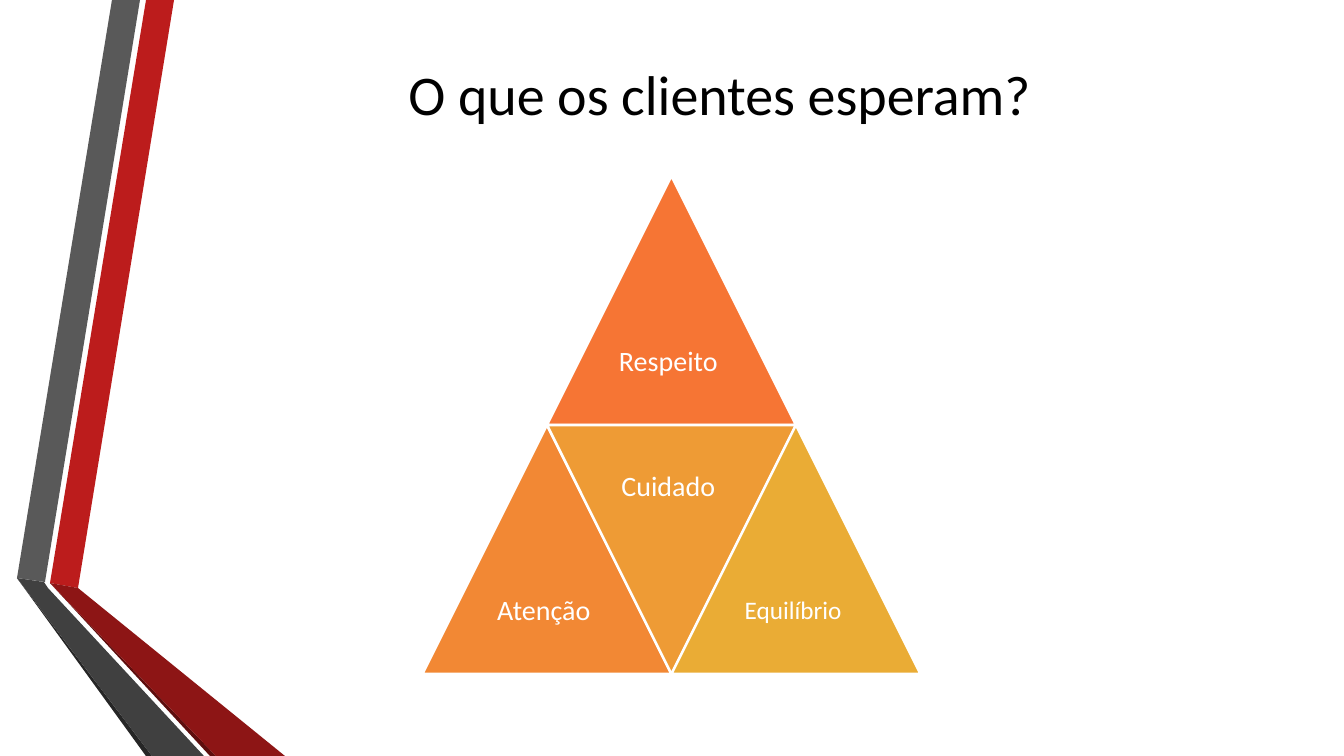
from pptx import Presentation
from pptx.dml.color import RGBColor
from pptx.enum.shapes import MSO_SHAPE as Shape
from pptx.enum.text import MSO_ANCHOR as Anchor, PP_ALIGN as Align
from pptx.util import Pt

PX = 914400 / 100.8  # EMU in one px
WIDTH, HEIGHT = 1344, 756

# Content
TITLE = "O que os clientes esperam?"
TITLE_BOX = (167, 0, 1105, 194)
FONT = "Calibri"

RIBBONS = [  # colour, outline in px
    ("BC1C1C", [(50, 583), (78, 588), (174, 0), (146, 0)]),
    ("595959", [(140, 0), (112, 0), (17, 578), (45, 582)]),
    ("262626", [(17, 578), (146, 756), (152, 756)]),
    ("5E0E0E", [(50, 583), (210, 756), (216, 756)]),
    ("8D1515", [(50, 583), (216, 756), (285, 756), (78, 588)]),
    ("404040", [(204, 756), (48, 588), (44, 582), (17, 578), (152, 756)]),
]

EXPECTATIONS = [  # label, fill, half steps right, row, inverted, text size
    ("Respeito ", "F67534", 0, 0, False, 20),
    ("Atenção ", "F28834", -1, 1, False, 20),
    ("Cuidado ", "EE9B35", 0, 1, True, 20),
    ("Equilíbrio ", "EAAC35", 1, 1, False, 18),
]
PYRAMID_LEFT, PYRAMID_TOP, SIDE = 547, 176, 249
HALF = SIDE / 2


def emu(*lengths):
    return [round(length * PX) for length in lengths]


def color(value):
    return RGBColor.from_string(value)


def paint(shape, fill):
    shape.shadow.inherit = False
    shape.fill.solid()
    shape.fill.fore_color.rgb = color(fill)


def add_text(text, box, size, ink, inset):
    frame = slide.shapes.add_textbox(*emu(*box)).text_frame
    frame.word_wrap = True
    frame.vertical_anchor = Anchor.MIDDLE
    frame.margin_left = frame.margin_right = emu(inset)[0]
    frame.margin_top = frame.margin_bottom = emu(inset)[0]
    paragraph = frame.paragraphs[0]
    paragraph.text = text
    paragraph.alignment = Align.CENTER
    paragraph.line_spacing = 0.9
    paragraph.font.name = FONT
    paragraph.font.size = Pt(size)
    paragraph.font.color.rgb = color(ink)


prs = Presentation()
prs.slide_width, prs.slide_height = emu(WIDTH, HEIGHT)
slide = prs.slides.add_slide(prs.slide_layouts[6])

# Folded ribbons on the left
for fill, corners in RIBBONS:
    builder = slide.shapes.build_freeform(*corners[0], scale=PX)
    builder.add_line_segments(corners[1:], close=True)
    ribbon = builder.convert_to_shape()
    paint(ribbon, fill)
    ribbon.line.fill.background()

# Title
add_text(TITLE, TITLE_BOX, 40, "000000", 8)

# Pyramid: each label sits in the wide half of its triangle
for label, fill, step, row, inverted, size in EXPECTATIONS:
    left = PYRAMID_LEFT + step * HALF
    top = PYRAMID_TOP + row * SIDE
    triangle = slide.shapes.add_shape(
        Shape.ISOSCELES_TRIANGLE, *emu(left, top, SIDE, SIDE))
    triangle.rotation = 180 if inverted else 0
    paint(triangle, fill)
    triangle.line.color.rgb = color("FFFFFF")
    triangle.line.width = Pt(1.75)
    label_top = top if inverted else top + HALF
    add_text(label, (left + HALF / 2, label_top, HALF, HALF), size, "FFFFFF", 8)

prs.save("out.pptx")
